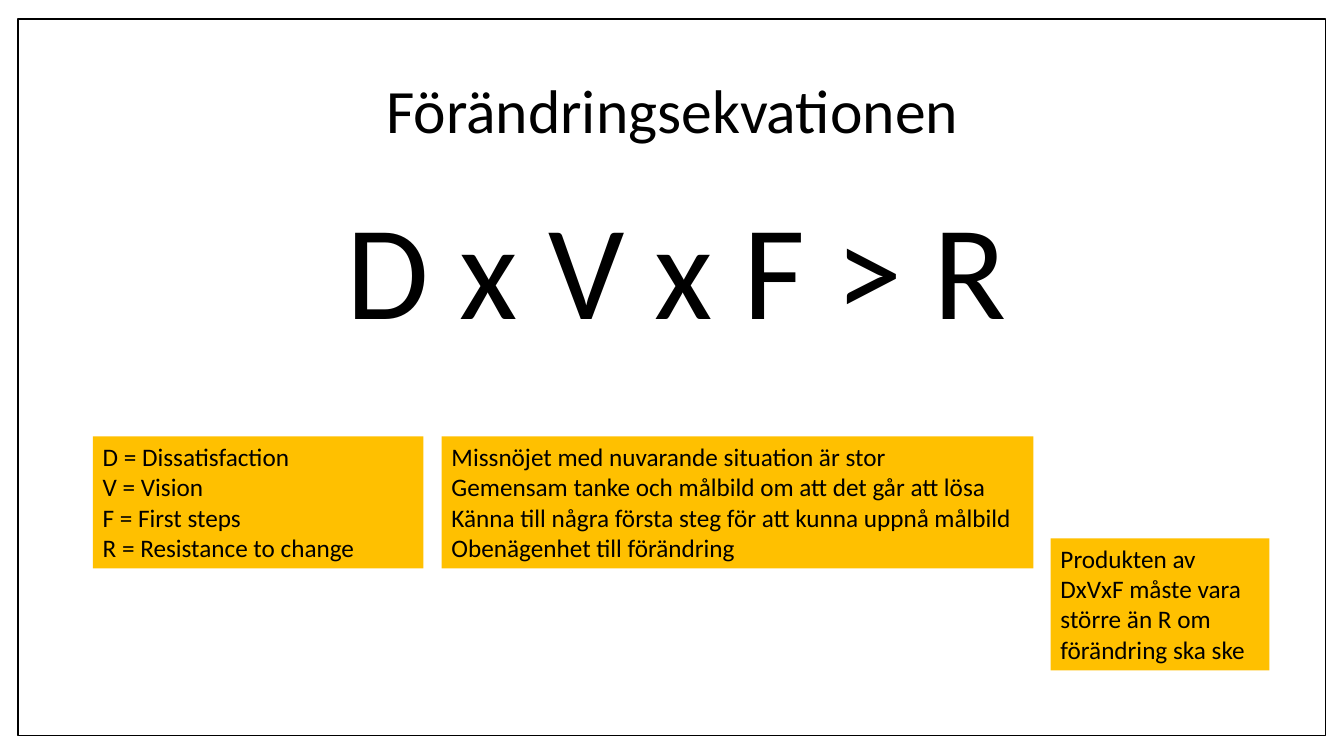
from pptx import Presentation
from pptx.dml.color import RGBColor
from pptx.enum.shapes import MSO_SHAPE
from pptx.enum.text import MSO_ANCHOR, PP_ALIGN
from pptx.util import Inches, Pt

BLACK = RGBColor(0x00, 0x00, 0x00)
AMBER = RGBColor(0xFF, 0xC0, 0x00)
FONT = "Calibri"

TITLE = "Förändringsekvationen"
EQUATION = "D x V x F > R"
BOX_HEIGHT = 1.31
# left, top, width, lines
BOXES = [
    (0.92, 4.33, 3.28, ["D = Dissatisfaction", "V = Vision", "F = First steps",
                        "R = Resistance to change"]),
    (4.38, 4.33, 5.87, ["Missnöjet med nuvarande situation är stor",
                        "Gemensam tanke och målbild om att det går att lösa",
                        "Känna till några första steg för att kunna uppnå målbild",
                        "Obenägenhet till förändring"]),
    (10.42, 5.34, 2.17, ["Produkten av DxVxF måste vara större än R om förändring ska ske"]),
]


def write(sp, lines, size, anchor=MSO_ANCHOR.TOP, align=PP_ALIGN.LEFT):
    """Fill a shape with one paragraph, its lines parted by line breaks."""
    tf = sp.text_frame
    tf.word_wrap = True
    tf.vertical_anchor = anchor
    p = tf.paragraphs[0]
    p.alignment = align
    for i, line in enumerate(lines):
        if i:
            p.add_line_break()
        r = p.add_run()
        r.text = line
        r.font.name = FONT
        r.font.size = Pt(size)
        r.font.color.rgb = BLACK
    return p


def add_rectangle(s, left, top, width, height):
    sp = s.shapes.add_shape(MSO_SHAPE.RECTANGLE, Inches(left), Inches(top),
                            Inches(width), Inches(height))
    sp.shadow.inherit = False
    return sp


def main():
    prs = Presentation()
    prs.slide_width, prs.slide_height = Inches(13.33), Inches(7.5)
    s = prs.slides.add_slide(prs.slide_layouts[6])

    title = s.shapes.add_textbox(Inches(0.92), Inches(0.4), Inches(11.5), Inches(1.45))
    p = write(title, [TITLE], 44, MSO_ANCHOR.MIDDLE, PP_ALIGN.CENTER)
    p.line_spacing = 0.9

    equation = s.shapes.add_textbox(Inches(3.34), Inches(2.1), Inches(7.19), Inches(1.45))
    p = write(equation, [EQUATION], 96)
    p.line_spacing = 0.8
    p.space_before = Pt(10)

    for left, top, width, lines in BOXES:
        box = add_rectangle(s, left, top, width, BOX_HEIGHT)
        box.fill.solid()
        box.fill.fore_color.rgb = AMBER
        box.line.fill.background()
        write(box, lines, 18)

    frame = add_rectangle(s, 0.18, 0.19, 12.97, 7.11)
    frame.fill.background()
    frame.line.color.rgb = BLACK
    frame.line.width = Pt(1)

    prs.save("out.pptx")


if __name__ == "__main__":
    main()
